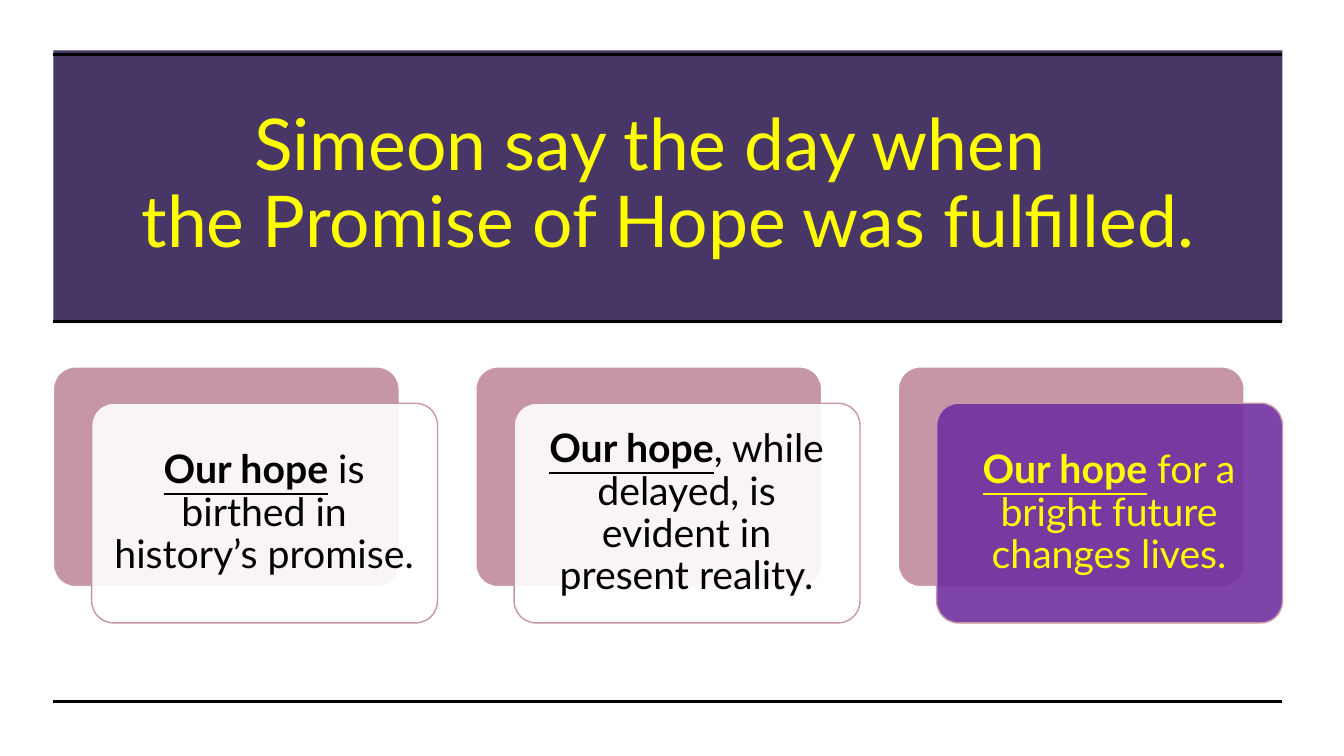
import pptx
import pptx.util
import pptx.dml.color
import pptx.enum.shapes
import pptx.enum.text
import pptx.oxml.ns
import lxml.etree

Inches = pptx.util.Inches
Pt = pptx.util.Pt
Kind = pptx.enum.shapes.MSO_SHAPE


def paint(shape, fill, alpha=100, line=None):
    shape.shadow.inherit = False
    shape.fill.solid()
    shape.fill.fore_color.rgb = pptx.dml.color.RGBColor.from_string(fill)
    if alpha < 100:
        tint = shape.fill._xPr.find(".//" + pptx.oxml.ns.qn("a:srgbClr"))
        lxml.etree.SubElement(tint, pptx.oxml.ns.qn("a:alpha"), val=str(alpha * 1000))
    if line:
        shape.line.color.rgb = pptx.dml.color.RGBColor.from_string(line)
        shape.line.width = Pt(1)
    else:
        shape.line.fill.background()


def write(shape, runs, size, color):
    frame = shape.text_frame
    frame.word_wrap = True
    frame.vertical_anchor = pptx.enum.text.MSO_ANCHOR.MIDDLE
    para = frame.paragraphs[0]
    para.alignment = pptx.enum.text.PP_ALIGN.CENTER
    para.line_spacing = 0.9
    for text, strong in runs:
        if text == "\n":
            para.add_line_break()
            continue
        run = para.add_run()
        run.text = text
        run.font.name = "Lato"
        run.font.size = Pt(size)
        run.font.bold = strong
        run.font.underline = strong
        run.font.color.rgb = pptx.dml.color.RGBColor.from_string(color)


deck = pptx.Presentation()
deck.slide_width = Inches(13.33)
deck.slide_height = Inches(7.5)
slide = deck.slides.add_slide(deck.slide_layouts[6])
shapes = slide.shapes

left, width = 0.53, 12.19

under = shapes.add_shape(Kind.RECTANGLE, Inches(0.52), Inches(0.53), Inches(width), Inches(2.69))
paint(under, "C696A8", 10)

title = shapes.add_shape(Kind.RECTANGLE, Inches(left), Inches(0.5), Inches(width), Inches(2.69))
paint(title, "483766")
lines = [
    ("Simeon say the day when  ", False),
    ("\n", False),
    ("the Promise of Hope was fulfilled.", False),
]
write(title, lines, 51, "FFFF00")

for top in (0.54, 3.19, 6.96):
    rule = shapes.add_connector(
        pptx.enum.shapes.MSO_CONNECTOR.STRAIGHT,
        Inches(left), Inches(top), Inches(left + width), Inches(top),
    )
    rule.line.color.rgb = pptx.dml.color.RGBColor.from_string("000000")
    rule.line.width = Pt(2.25)
    lxml.etree.SubElement(rule._element.spPr, pptx.oxml.ns.qn("a:effectLst"))

cards = [
    (" is birthed in history’s promise.", "FFFFFF", "000000"),
    (", while delayed, is evident in present reality.", "FFFFFF", "000000"),
    (" for a bright future changes lives.", "7030A0", "FFFF00"),
]
for i, (text, fill, color) in enumerate(cards):
    x = left + i * 4.19
    layers = [
        (x, 3.64, "C696A8", 100, "FFFFFF"),
        (x + 0.38, 4, fill, 90, "C696A8"),
    ]
    for side, top, shade, alpha, edge in layers:
        card = shapes.add_shape(
            Kind.ROUNDED_RECTANGLE, Inches(side), Inches(top), Inches(3.43), Inches(2.18)
        )
        card.adjustments[0] = 0.1
        paint(card, shade, alpha, edge)

    box = shapes.add_textbox(Inches(x + 0.44), Inches(4.07), Inches(3.3), Inches(2.05))
    frame = box.text_frame
    frame.margin_left = frame.margin_right = Inches(0.12)
    frame.margin_top = frame.margin_bottom = Inches(0.12)
    write(box, [("Our hope", True), (text, False)], 28, color)

deck.save("out.pptx")
